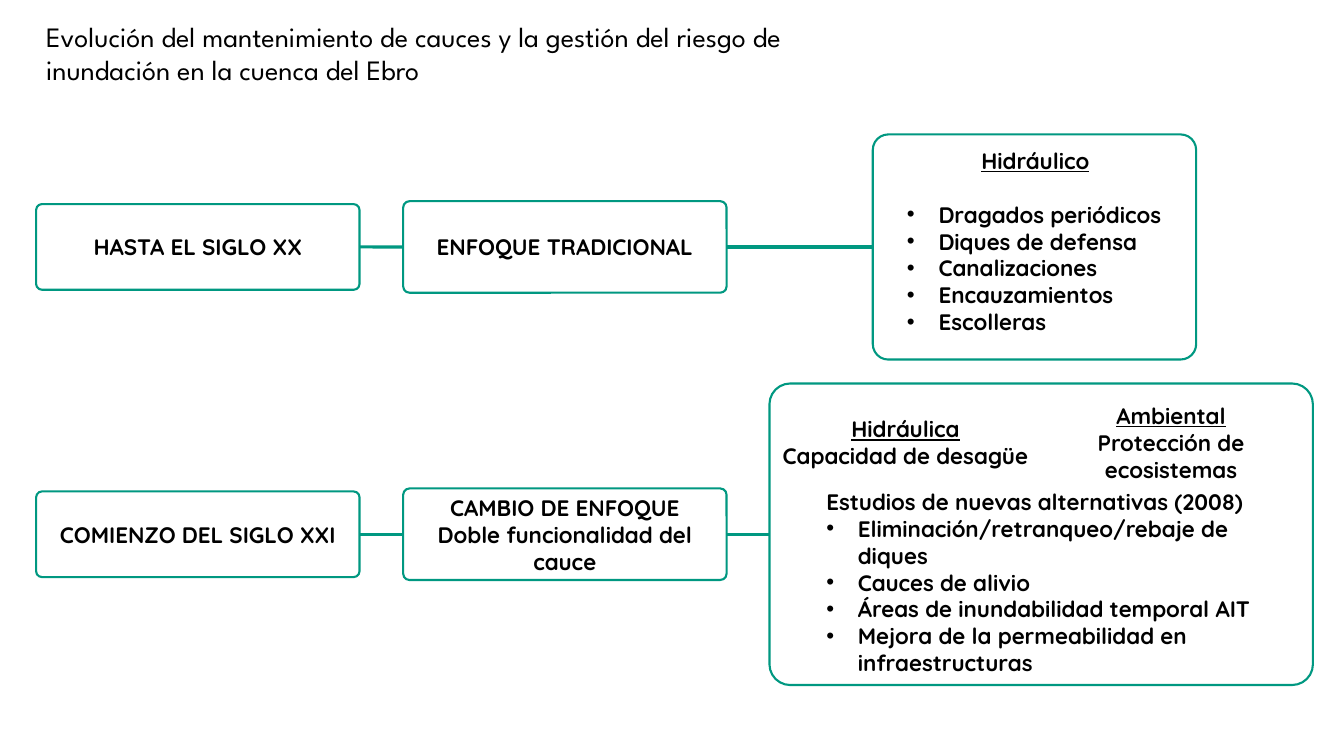
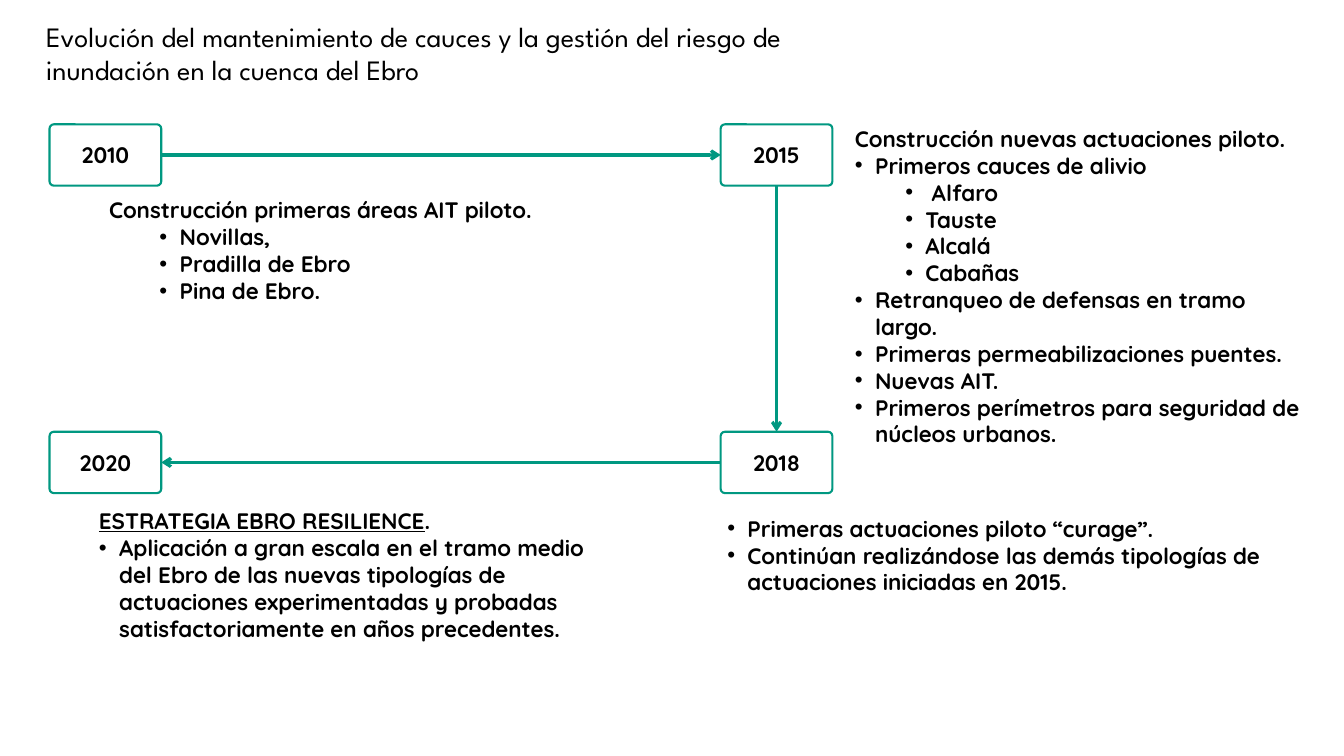
from dataclasses import dataclass
from itertools import pairwise

from lxml import etree
from pptx import Presentation
from pptx.dml.color import RGBColor
from pptx.enum.shapes import MSO_CONNECTOR, MSO_SHAPE
from pptx.enum.text import MSO_ANCHOR, PP_ALIGN
from pptx.oxml.ns import qn
from pptx.util import Inches, Pt

ROUNDED = MSO_SHAPE.ROUNDED_RECTANGLE
STRAIGHT = MSO_CONNECTOR.STRAIGHT
TOP, MIDDLE = MSO_ANCHOR.TOP, MSO_ANCHOR.MIDDLE
LEFT, CENTER = PP_ALIGN.LEFT, PP_ALIGN.CENTER
SIDE_TOP, SIDE_LEFT, SIDE_BOTTOM, SIDE_RIGHT = range(4)

SLIDE_WIDTH, SLIDE_HEIGHT = 13.33, 7.5
COLUMNS, ROWS = 160, 90


@dataclass(frozen=True)
class Theme:
    ink = RGBColor.from_string("000000")
    paper = RGBColor.from_string("FFFFFF")
    accent = RGBColor.from_string("009881")
    title_font = {"name": "League Spartan", "size": Pt(20), "bold": False}
    body_font = {"name": "Quicksand", "size": Pt(16), "bold": True}
    outline = Pt(1.5)
    link = Pt(2.25)
    corner = 0.069


THEME = Theme()


@dataclass(frozen=True)
class Indent:
    level: int = 0
    margin: float = 0
    hanging: float = 0
    bullet: bool = True


PLAIN = Indent(bullet=False)
ITEM = Indent(0, 2.4, 2.4)
SUBITEM = Indent(1, 8.4, 2.4)
MEASURE = Indent(0, 3.75, 3.75)
STUDY = Indent(1, 9.75, 3.75)
STUDY_HEADING = Indent(1, 9.75, 3.75, bullet=False)


@dataclass(frozen=True)
class Line:
    text: str
    indent: Indent = PLAIN
    underlined: str = ""


TITLE = ("Evolución del mantenimiento de cauces y la gestión del riesgo de "
         "inundación en la cuenca del Ebro")


def col(count):
    return Inches(count * SLIDE_WIDTH / COLUMNS)


def row(count):
    return Inches(count * SLIDE_HEIGHT / ROWS)


def place(left, top, width, height):
    return col(left), row(top), col(width), row(height)


def lines(indent, *texts):
    return [Line(text, indent) for text in texts]


def apply(target, values):
    for attribute, value in values.items():
        setattr(target, attribute, value)


def indent_paragraph(paragraph, indent):
    paragraph.level = indent.level
    properties = paragraph._p.get_or_add_pPr()
    properties.set("marL", str(col(indent.margin)))
    properties.set("indent", str(-col(indent.hanging)))
    if indent.bullet:
        etree.SubElement(properties, qn("a:buFont")).set("typeface", "Arial")
        etree.SubElement(properties, qn("a:buChar")).set("char", "•")
    else:
        etree.SubElement(properties, qn("a:buNone"))


def write(frame, content, font, align=LEFT, anchor=TOP):
    apply(frame, {"word_wrap": True, "vertical_anchor": anchor})
    for index, line in enumerate(content):
        paragraph = frame.add_paragraph() if index else frame.paragraphs[0]
        paragraph.alignment = align
        indent_paragraph(paragraph, line.indent)
        for text, underline in ((line.underlined, True), (line.text, False)):
            if text:
                run = paragraph.add_run()
                run.text = text
                apply(run.font, {**font, "underline": underline})
                run.font.color.rgb = THEME.ink


def add_text(slide, area, content, font=THEME.body_font, **layout):
    box = slide.shapes.add_textbox(*place(*area))
    write(box.text_frame, content, font, **layout)


def add_box(slide, area, content=(), side_padding=1.2):
    box = slide.shapes.add_shape(ROUNDED, *place(*area))
    box.shadow.inherit = False
    box.adjustments[0] = THEME.corner
    box.fill.solid()
    box.fill.fore_color.rgb = THEME.paper
    box.line.color.rgb = THEME.accent
    box.line.width = THEME.outline
    apply(box.text_frame, {"margin_left": col(side_padding),
                           "margin_right": col(side_padding)})
    write(box.text_frame, content, THEME.body_font, CENTER, MIDDLE)
    return box


def link(slide, start, start_side, end, end_side, arrow=False):
    connector = slide.shapes.add_connector(STRAIGHT, 0, 0, 0, 0)
    connector.begin_connect(start, start_side)
    connector.end_connect(end, end_side)
    connector.line.color.rgb = THEME.accent
    connector.line.width = THEME.link
    if arrow:
        outline = connector.line._get_or_add_ln()
        etree.SubElement(outline, qn("a:tailEnd")).set("type", "arrow")
    etree.SubElement(connector._element.spPr, qn("a:effectLst"))


def add_titled_slide(deck):
    slide = deck.slides.add_slide(deck.slide_layouts[6])
    add_text(slide, (4.3, 1.7, 104.8, 9.2), [Line(TITLE)], THEME.title_font)
    return slide


def add_era(slide, center, period, approach, card):
    card_left, card_width, card_height = card
    cells = (
        (4.3, 38.5, 10.2, period),
        (48, 38.5, 10.9, approach),
        (card_left, card_width, card_height, ()),
    )
    boxes = [
        add_box(slide, (left, center - height / 2, width, height), content, 3.8 if len(content) > 1 else 1.2)
        for left, width, height, content in cells
    ]
    for before, after in pairwise(boxes):
        link(slide, before, SIDE_RIGHT, after, SIDE_LEFT)


def build_approaches(deck):
    slide = add_titled_slide(deck)
    add_era(slide, 29.4, [Line("HASTA EL SIGLO XX")],
            [Line("ENFOQUE TRADICIONAL")], (103.9, 38.5, 26.8))
    add_text(slide, (115.2, 16.9, 16.1, 4.4), [Line("", underlined="Hidráulico")],
             align=CENTER, anchor=MIDDLE)
    add_text(slide, (106.8, 23.2, 32.9, 17.4),
             lines(MEASURE, "Dragados periódicos", "Diques de defensa",
                   "Canalizaciones", "Encauzamientos", "Escolleras"),
             anchor=MIDDLE)

    add_era(slide, 63.6, [Line("COMIENZO DEL SIGLO XXI")],
            lines(PLAIN, "CAMBIO DE ENFOQUE", "Doble funcionalidad del cauce"),
            (91.6, 64.7, 35.9))
    functions = (
        (91.6, 32.4, "Hidráulica", "Capacidad de desagüe"),
        (122.5, 33.8, "Ambiental", "Protección de ecosistemas"),
    )
    for left, width, heading, purpose in functions:
        add_text(slide, (left, 48.8, width, 7.7),
                 [Line("", underlined=heading), Line(purpose)],
                 align=CENTER, anchor=MIDDLE)
    add_text(slide, (91.2, 59, 64.9, 20.6),
             [Line("Estudios de nuevas alternativas (2008)", STUDY_HEADING),
              *lines(STUDY, "Eliminación/retranqueo/rebaje de diques",
                     "Cauces de alivio", "Áreas de inundabilidad temporal AIT",
                     "Mejora de la permeabilidad en infraestructuras")],
             anchor=MIDDLE)


def build_milestones(deck):
    slide = add_titled_slide(deck)
    near, far, upper, lower = 5.9, 85.8, 14.8, 51.4
    corners = {"2010": (near, upper), "2015": (far, upper),
               "2018": (far, lower), "2020": (near, lower)}
    years = {year: add_box(slide, (*corner, 13.3, 7.3), [Line(year)])
             for year, corner in corners.items()}
    sides = ((SIDE_RIGHT, SIDE_LEFT), (SIDE_BOTTOM, SIDE_TOP), (SIDE_LEFT, SIDE_RIGHT))
    for (start, end), (leave, arrive) in zip(pairwise(years.values()), sides):
        link(slide, start, leave, end, arrive, arrow=True)

    notes = (
        ((11.8, 22.8, 72.6, 14.2), [
            Line("Construcción primeras áreas AIT piloto."),
            *lines(SUBITEM, "Novillas,", "Pradilla de Ebro", "Pina de Ebro."),
        ]),
        ((100.6, 14.3, 55.8, 36.7), [
            Line("Construcción nuevas actuaciones piloto."),
            Line("Primeros cauces de alivio", ITEM),
            *lines(SUBITEM, " Alfaro", "Tauste", "Alcalá", "Cabañas"),
            *lines(ITEM, "Retranqueo de defensas en tramo largo.",
                   "Primeras permeabilizaciones puentes.", "Nuevas AIT.",
                   "Primeros perímetros para seguridad de núcleos urbanos."),
        ]),
        ((85.4, 60.7, 73.1, 10.9), lines(
            ITEM, "Primeras actuaciones piloto “curage”.",
            "Continúan realizándose las demás tipologías de actuaciones "
            "iniciadas en 2015.")),
        ((10.6, 59.8, 64.7, 17.4), [
            Line(".", underlined="ESTRATEGIA EBRO RESILIENCE"),
            Line("Aplicación a gran escala en el tramo medio del Ebro de las "
                 "nuevas tipologías de actuaciones experimentadas y probadas "
                 "satisfactoriamente en años precedentes.", ITEM),
        ]),
    )
    for area, content in notes:
        add_text(slide, area, content)


def main():
    deck = Presentation()
    apply(deck, {"slide_width": Inches(SLIDE_WIDTH),
                 "slide_height": Inches(SLIDE_HEIGHT)})
    build_approaches(deck)
    build_milestones(deck)
    deck.save("out.pptx")


if __name__ == "__main__":
    main()
